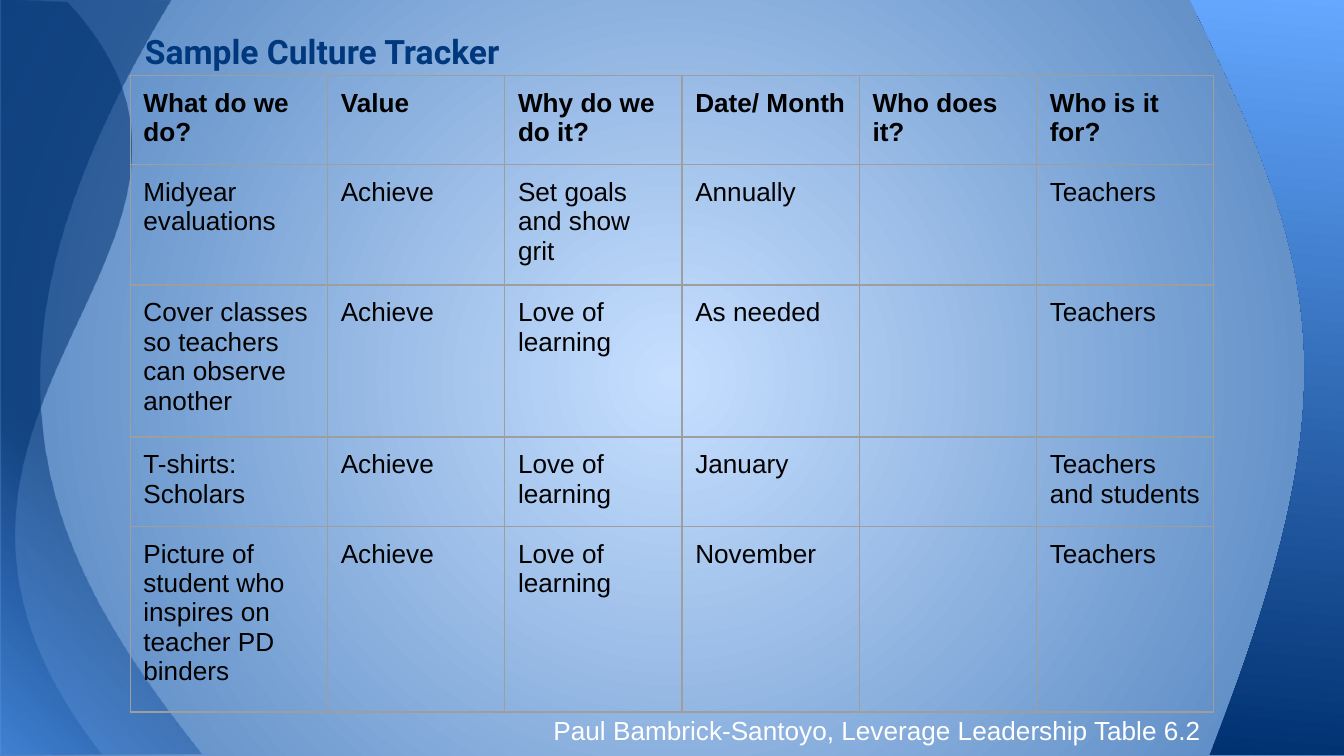
from dataclasses import dataclass

from lxml.etree import SubElement
from pptx import Presentation
from pptx.dml.color import RGBColor
from pptx.enum.text import MSO_ANCHOR
from pptx.oxml.ns import qn
from pptx.util import Cm, Pt


@dataclass(frozen=True)
class Theme:
    title_font: str = "Roboto"
    body_font: str = "Arial"
    title_size: int = 18
    body_size: int = 14
    title_color: str = "00387E"
    body_color: str = "000000"
    credit_color: str = "FFFFFF"
    border_color: str = "9E9E9E"
    border_width: float = 0.75
    backdrop: tuple = ((0, "C6DFFF", 100), (100, "4F81BD", 100))
    left_wave: tuple = ((0, "549FFF", 54), (41, "003171", 54), (100, "003171", 54))
    right_wave: tuple = ((0, "003171", 100), (100, "65A8FF", 100))


THEME = Theme()
INSET = Cm(0.25)
CENTER = (50, 50, 50, 50)
BOTTOM_LEFT = (0, 100, 100, 0)

LEFT_WAVES = [
    [[(3.81, 14.25)], [(-0.03, 14.27)], [(0, -0.05)], [(3.23, 0)],
     [(-0.97, 6.91), (0.84, 10.49), (3.81, 14.25)]],
    [[(1.91, 14.25)], [(0.03, 14.27)], [(0.03, 0)], [(1.27, 0.05)],
     [(5.51, 4.62), (-3.1, 7.82), (1.91, 14.25)]],
]
RIGHT_WAVE = [[(25.53, 14.27)], [(22.86, 14.27)],
              [(25.65, 7.21), (24.92, 4.98), (22.48, -0.03)], [(25.53, -0.03)]]

COLUMN_WIDTHS = [3.73] + [3.35] * 5
ROW_HEIGHTS = [1.6, 2.17, 2.74, 1.6, 3.51]
TRACKER = [
    ["What do we do?", "Value", "Why do we do it?", "Date/ Month", "Who does it?", "Who is it for?"],
    ["Midyear evaluations", "Achieve", "Set goals and show grit", "Annually", "", "Teachers"],
    ["Cover classes so teachers can observe another", "Achieve", "Love of learning",
     "As needed", "", "Teachers"],
    ["T-shirts: Scholars", "Achieve", "Love of learning", "January", "", "Teachers and students"],
    ["Picture of student who inspires on teacher PD binders", "Achieve", "Love of learning",
     "November", "", "Teachers"],
]


def write(frame, text, font=THEME.body_font, size=THEME.body_size,
          color=THEME.body_color, bold=False):
    run = frame.paragraphs[0].add_run()
    run.text = text
    run.font.name = font
    run.font.size = Pt(size)
    run.font.bold = bold
    run.font.color.rgb = RGBColor.from_string(color)


def paint_gradient(owner, element, stops, focus=None, angle=0):
    owner.fill.gradient()
    gradient = element.find(".//" + qn("a:gradFill"))
    for child in list(gradient):
        gradient.remove(child)
    stop_list = SubElement(gradient, qn("a:gsLst"))
    for position, color, opacity in stops:
        stop = SubElement(stop_list, qn("a:gs"), pos=str(position * 1000))
        tint = SubElement(stop, qn("a:srgbClr"), val=color)
        if opacity < 100:
            SubElement(tint, qn("a:alpha"), val=str(opacity * 1000))
    if focus:
        circle = SubElement(gradient, qn("a:path"), path="circle")
        edges = {side: str(share * 1000) for side, share in zip("ltrb", focus)}
        SubElement(circle, qn("a:fillToRect"), **edges)
    else:
        SubElement(gradient, qn("a:lin"), ang=str(angle * 60000), scaled="0")


def add_wave(slide, segments, stops, **direction):
    points = [(Cm(x), Cm(y)) for segment in segments for x, y in segment]
    builder = slide.shapes.build_freeform(*points[0], scale=1.0)
    builder.add_line_segments(points[1:], close=True)
    wave = builder.convert_to_shape()
    edges = iter(wave.element.findall(".//" + qn("a:lnTo")))
    for segment in segments[1:]:
        pieces = [next(edges) for _ in segment]
        if len(pieces) == 3:
            pieces[0].tag = qn("a:cubicBezTo")
            for piece in pieces[1:]:
                pieces[0].append(piece[0])
                piece.getparent().remove(piece)
    paint_gradient(wave, wave.element, stops, **direction)
    wave.line.fill.background()
    wave.shadow.inherit = False


def add_label(slide, left, top, width, height, text, anchor=MSO_ANCHOR.TOP, **style):
    frame = slide.shapes.add_textbox(Cm(left), Cm(top), Cm(width), Cm(height)).text_frame
    frame.word_wrap = True
    frame.vertical_anchor = anchor
    frame.margin_left = frame.margin_right = INSET
    frame.margin_top = frame.margin_bottom = INSET
    write(frame, text, **style)


def format_cell(cell):
    cell.margin_left = cell.margin_right = INSET
    cell.margin_top = cell.margin_bottom = INSET
    properties = cell._tc.get_or_add_tcPr()
    for side in ("lnL", "lnR", "lnT", "lnB"):
        border = SubElement(properties, qn(f"a:{side}"), w=str(Pt(THEME.border_width)))
        paint = SubElement(border, qn("a:solidFill"))
        SubElement(paint, qn("a:srgbClr"), val=THEME.border_color)
    cell.fill.background()


def add_tracker(slide, left, top):
    table = slide.shapes.add_table(
        len(ROW_HEIGHTS), len(COLUMN_WIDTHS), Cm(left), Cm(top),
        Cm(sum(COLUMN_WIDTHS)), Cm(sum(ROW_HEIGHTS))).table
    table.first_row = table.horz_banding = False
    for column, width in zip(table.columns, COLUMN_WIDTHS):
        column.width = Cm(width)
    for index, (row, height, entries) in enumerate(zip(table.rows, ROW_HEIGHTS, TRACKER)):
        row.height = Cm(height)
        for cell, entry in zip(row.cells, entries):
            format_cell(cell)
            if entry:
                write(cell.text_frame, entry, bold=index == 0)


def main():
    deck = Presentation()
    deck.slide_width, deck.slide_height = Cm(25.4), Cm(14.29)
    slide = deck.slides.add_slide(deck.slide_layouts[6])
    paint_gradient(slide.background, slide.element, THEME.backdrop, focus=CENTER)
    for wave in LEFT_WAVES:
        add_wave(slide, wave, THEME.left_wave, focus=BOTTOM_LEFT)
    add_wave(slide, RIGHT_WAVE, THEME.right_wave, angle=275)
    add_label(slide, 2.49, 0.13, 22.86, 1.47, "Sample Culture Tracker",
              anchor=MSO_ANCHOR.BOTTOM, font=THEME.title_font,
              size=THEME.title_size, color=THEME.title_color, bold=True)
    add_label(slide, 10.21, 13.26, 13.36, 0.81,
              "Paul Bambrick-Santoyo, Leverage Leadership Table 6.2",
              color=THEME.credit_color)
    add_tracker(slide, 2.46, 1.42)
    deck.save("out.pptx")


if __name__ == "__main__":
    main()
